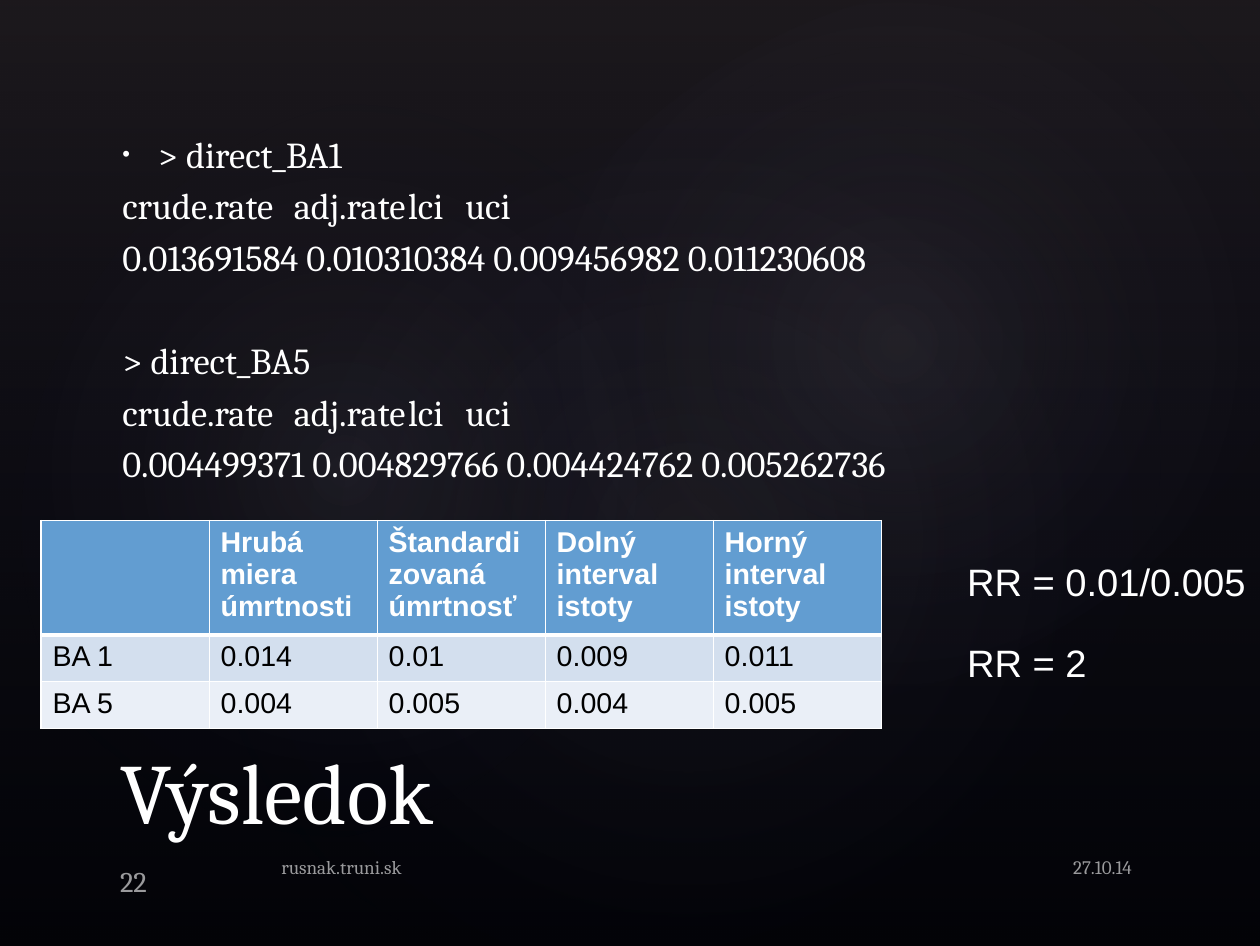
"""Build the result slide with rates, a table and the risk ratio."""
from dataclasses import dataclass

from pptx import Presentation
from pptx.dml.color import RGBColor
from pptx.enum.shapes import MSO_SHAPE
from pptx.enum.text import MSO_ANCHOR, PP_ALIGN
from pptx.oxml import parse_xml
from pptx.oxml.ns import nsdecls, qn
from pptx.util import Pt

RECT, OVAL = MSO_SHAPE.RECTANGLE, MSO_SHAPE.OVAL
TOP, MID, LOW = MSO_ANCHOR.TOP, MSO_ANCHOR.MIDDLE, MSO_ANCHOR.BOTTOM
LEFT, RIGHT = PP_ALIGN.LEFT, PP_ALIGN.RIGHT
WIDTH, HEIGHT = 793.44, 595.44
STOPS = (116, 232, 299)


@dataclass(frozen=True)
class Theme:
    """Hold the fonts, sizes and colours."""
    serif: str = "Cambria"
    sans: str = "Arial"
    title: int = 54
    ratio: int = 24
    body: int = 23
    cell: int = 18
    page: int = 18
    foot: int = 12
    black: str = "000000"
    white: str = "FFFFFF"
    haze: str = "504652"
    glow: str = "C4BCC6"
    navy: str = "242852"
    head: str = "629DD1"
    bands: tuple = ("D3DFEE", "EAEFF7")


LOOK = Theme()

GLOWS = (
    ((118.8, 90, 628.6, 495.4), 328.7, 7),
    ((-23.8, 101.5, 481, 388.8), 294.3, 8),
    ((284.4, 10.1, 562.3, 412.6), 328.7, 8),
)
NAMES = "crude.rate\tadj.rate\tlci\tuci"
RATES = (
    "> direct_BA1",
    NAMES,
    "0.013691584 0.010310384 0.009456982 0.011230608",
    "> direct_BA5",
    NAMES,
    "0.004499371 0.004829766 0.004424762 0.005262736",
)
ROWS = (
    ("", "Hrubá miera úmrtnosti", "Štandardizovaná úmrtnosť",
     "Dolný interval istoty", "Horný interval istoty"),
    ("BA 1", "0.014", "0.01", "0.009", "0.011"),
    ("BA 5", "0.004", "0.005", "0.004", "0.005"),
)


def make(tag, inner="", attrs=""):
    """Return a drawing element with the given content."""
    return parse_xml(f"<a:{tag} {nsdecls('a')} {attrs}>{inner}</a:{tag}>")


def style(para, size, face=LOOK.serif, color=LOOK.white, bold=False):
    """Set the font of a whole paragraph."""
    font = para.font
    font.name, font.size, font.bold = face, Pt(size), bold
    font.color.rgb = RGBColor.from_string(color)


def shade(slide, kind, box, stops, path, turn=0):
    """Draw a see-through gradient shape."""
    shape = slide.shapes.add_shape(kind, *map(Pt, box))
    shape.shadow.inherit = False
    shape.rotation = turn
    shape.line.fill.background()
    shape.fill.background()
    marks = "".join(
        f'<a:gs pos="{pos * 1000}"><a:srgbClr val="{color}">'
        f'<a:alpha val="{alpha * 1000}"/></a:srgbClr></a:gs>'
        for pos, color, alpha in stops)
    props = shape.fill._xPr
    blank = props.find(qn("a:noFill"))
    props.replace(blank, make("gradFill", f"<a:gsLst>{marks}</a:gsLst>{path}"))


def backdrop(slide):
    """Draw the dark ground and its soft glows."""
    fill = slide.background.fill
    fill.solid()
    fill.fore_color.rgb = RGBColor.from_string(LOOK.black)
    shade(slide, RECT, (0, 0, WIDTH, HEIGHT),
          ((0, LOOK.haze, 36), (100, LOOK.navy, 10)),
          '<a:lin ang="5400000" scaled="0"/>')
    round_path = ('<a:path path="circle"><a:fillToRect l="50000" t="50000" '
                  'r="50000" b="50000"/></a:path>')
    for box, turn, alpha in GLOWS:
        shade(slide, OVAL, box, ((0, LOOK.glow, alpha), (58, LOOK.navy, 0)),
              round_path, turn)


def write(slide, box, lines, size, anchor=TOP, align=LEFT, face=LOOK.serif,
          pads=(7.9, 4.3, 7.9, 4.3), wrap=True):
    """Add a text box and return its paragraphs."""
    frame = slide.shapes.add_textbox(*map(Pt, box)).text_frame
    frame.word_wrap = wrap
    frame.vertical_anchor = anchor
    (frame.margin_left, frame.margin_top,
     frame.margin_right, frame.margin_bottom) = map(Pt, pads)
    frame.text = "\n".join(lines)
    for para in frame.paragraphs:
        para.alignment = align
        style(para, size, face)
    return frame.paragraphs


def rates(slide):
    """Write the console output with tabbed headings."""
    paras = write(slide, (67.7, 59.8, 646.6, 268.6), RATES, LOOK.body, MID)
    tabs = "".join(f'<a:tab pos="{Pt(stop)}" algn="l"/>' for stop in STOPS)
    for index, para in enumerate(paras):
        para.space_before = Pt(37 if index == 3 else 5)
        props = para._p.pPr
        font = props.find(qn("a:defRPr"))
        first = index == 0
        props.set("marL", str(Pt(23.8 if first else 1.4)))
        props.set("indent", str(Pt(-22.3 if first else 0)))
        if first:
            font.addprevious(make("buSzPct", attrs='val="60000"'))
            font.addprevious(make("buFont", attrs=f'typeface="{LOOK.sans}"'))
            font.addprevious(make("buChar", attrs='char="•"'))
        if para.text == NAMES:
            font.addprevious(make("tabLst", tabs))


def footer(slide, left, width, text, size, **place):
    """Write one faded footer item."""
    para, = write(slide, (left, 534.2, width, 31.7), [text], size, **place)
    for color in para._p.iter(qn("a:srgbClr")):
        color.append(make("alpha", attrs='val="60000"'))


def edge(cell, row):
    """Draw white borders, thick below the heading."""
    props = cell._tc.get_or_add_tcPr()
    for side in "LRTB":
        thick = (row, side) in ((0, "B"), (1, "T"))
        line = f'<a:solidFill><a:srgbClr val="{LOOK.white}"/></a:solidFill>'
        props.append(make(f"ln{side}", line, f'w="{Pt(3 if thick else 1)}"'))


def grid(slide):
    """Add the table of rounded rates."""
    table = slide.shapes.add_table(
        len(ROWS), len(ROWS[0]), Pt(25.9), Pt(327.6), Pt(529.2), Pt(127)).table
    for row, texts in enumerate(ROWS):
        head = row == 0
        table.rows[row].height = Pt(68 if head else 29.5)
        fill = LOOK.head if head else LOOK.bands[row - 1]
        for col, text in enumerate(texts):
            cell = table.cell(row, col)
            cell.text = text
            style(cell.text_frame.paragraphs[0], LOOK.cell, LOOK.sans,
                  LOOK.white if head else LOOK.black, head)
            edge(cell, row)
            cell.fill.solid()
            cell.fill.fore_color.rgb = RGBColor.from_string(fill)


def ratio(slide):
    """Write the risk ratio beside the table."""
    paras = write(slide, (601.9, 351.4, 191.5, 83.5),
                  ("RR = 0.01/0.005", "RR = 2"), LOOK.ratio, face=LOOK.sans,
                  pads=(7.2, 3.6, 7.2, 3.6), wrap=False)
    for para in paras:
        para.line_spacing = 0.9
    paras[1].space_before = Pt(25)


def main():
    """Build and save the slide."""
    deck = Presentation()
    deck.slide_width, deck.slide_height = Pt(WIDTH), Pt(HEIGHT)
    slide = deck.slides.add_slide(deck.slide_layouts[6])
    backdrop(slide)
    rates(slide)
    write(slide, (67.7, 455, 654.5, 79.2), ["Výsledok"], LOOK.title, LOW)
    footer(slide, 629.3, 91.4, "27.10.14", LOOK.foot, align=RIGHT)
    footer(slide, 67.7, 64.8, "22", LOOK.page, anchor=LOW,
           pads=(7.9, 4.3, 7.9, 0.7))
    footer(slide, 169.2, 431.3, "rusnak.truni.sk", LOOK.foot)
    grid(slide)
    ratio(slide)
    deck.save("out.pptx")


if __name__ == "__main__":
    main()
